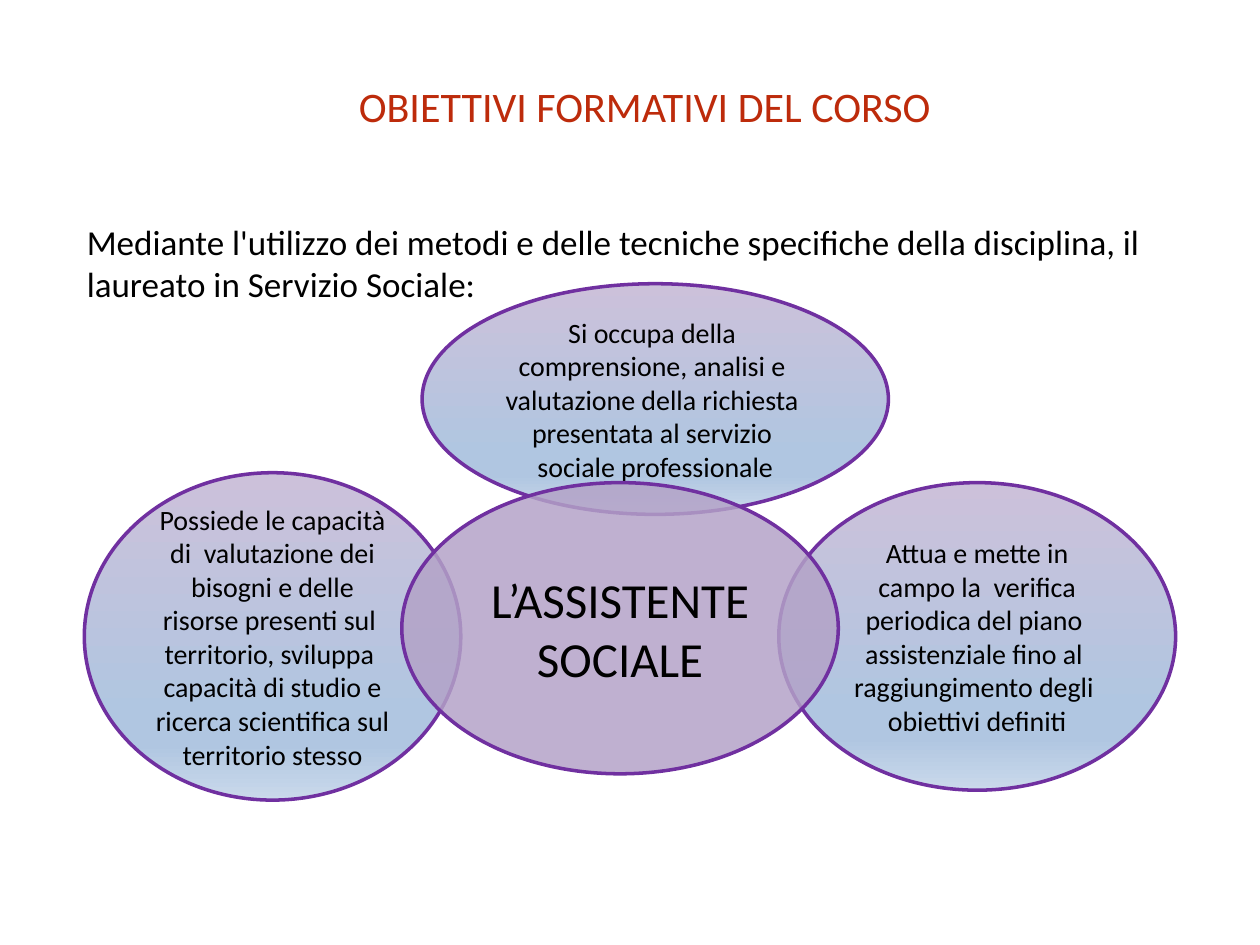
import pptx
import pptx.util
import pptx.dml.color
import pptx.enum.shapes
import pptx.enum.text
import pptx.oxml
import pptx.oxml.ns
from pptx.util import Cm, Pt

RGBColor = pptx.dml.color.RGBColor
ALIGN = pptx.enum.text.PP_ALIGN
ANCHOR = pptx.enum.text.MSO_ANCHOR

RED = RGBColor(0xBD, 0x2B, 0x0B)
BLACK = RGBColor(0, 0, 0)
PURPLE = RGBColor(0x70, 0x30, 0xA0)
LILAC = RGBColor(0xB3, 0xA2, 0xC7)
MIST = RGBColor(0xCC, 0xC1, 0xDA)
SKY = RGBColor(0xB0, 0xC6, 0xE1)
PALE = RGBColor(0xCA, 0xD9, 0xEB)
GRADIENT = [(0, MIST), (74, SKY), (83, SKY), (100, PALE)]

TASKS = [
    ((8.51, 5.72, 9.4, 4.65),
     "Si occupa della  comprensione, analisi e  valutazione della richiesta  "
     "presentata al servizio  sociale professionale"),
    ((1.7, 9.53, 7.59, 6.6),
     "Possiede le capacità di  valutazione dei bisogni e delle risorse presenti sul  "
     "territorio, sviluppa  capacità di studio e ricerca scientifica sul territorio stesso"),
    ((15.7, 9.73, 8, 6.2),
     "Attua e mette in campo la  verifica periodica del piano  assistenziale fino al  "
     "raggiungimento degli  obiettivi definiti"),
]


def set_format(obj, values):
    for name, value in values.items():
        setattr(obj, name, value)


def write_text(tf, lines, size, color=BLACK, **paragraph_format):
    tf.word_wrap = True
    for i, line in enumerate(lines):
        p = tf.paragraphs[0] if i == 0 else tf.add_paragraph()
        set_format(p, paragraph_format)
        r = p.add_run()
        r.text = line
        set_format(r.font, {"name": "Calibri", "size": Pt(size)})
        r.font.color.rgb = color


def add_text(slide, box, text, size, **text_format):
    tb = slide.shapes.add_textbox(*map(Cm, box))
    write_text(tb.text_frame, [text], size, **text_format)


def add_ellipse(slide, box, lines, size):
    sp = slide.shapes.add_shape(pptx.enum.shapes.MSO_SHAPE.OVAL, *map(Cm, box))
    sp.shadow.inherit = False
    sp.line.color.rgb = PURPLE
    sp.line.width = Pt(2)
    sp.text_frame.vertical_anchor = ANCHOR.MIDDLE
    write_text(sp.text_frame, lines, size, alignment=ALIGN.CENTER)
    return sp


def fill_gradient(sp, stops):
    sp.fill.gradient()
    sp.fill.gradient_angle = 270
    qn = pptx.oxml.ns.qn
    gs_list = sp._element.spPr.find(".//" + qn("a:gsLst"))
    for gs in list(gs_list):
        gs_list.remove(gs)
    for position, color in stops:
        gs_list.append(pptx.oxml.parse_xml(
            f'<a:gs {pptx.oxml.ns.nsdecls("a")} pos="{position * 1000}">'
            f'<a:srgbClr val="{color}"/></a:gs>'))


def fill_translucent(sp, color, opacity):
    sp.fill.solid()
    sp.fill.fore_color.rgb = color
    qn = pptx.oxml.ns.qn
    clr = sp._element.spPr.find(qn("a:solidFill")).find(qn("a:srgbClr"))
    clr.append(pptx.oxml.parse_xml(
        f'<a:alpha {pptx.oxml.ns.nsdecls("a")} val="{opacity * 1000}"/>'))


def main():
    prs = pptx.Presentation()
    set_format(prs, {"slide_width": Cm(25.4), "slide_height": Cm(19.05)})
    slide = prs.slides.add_slide(prs.slide_layouts[6])

    add_text(slide, (1.5, 1.73, 23, 1.8), "OBIETTIVI FORMATIVI DEL CORSO", 24,
             color=RED, alignment=ALIGN.CENTER, line_spacing=Pt(22))
    add_text(slide, (1.5, 4.32, 23, 12),
             "Mediante l'utilizzo dei metodi e delle tecniche specifiche della "
             "disciplina, il laureato in Servizio Sociale:", 20)

    for box, text in TASKS:
        fill_gradient(add_ellipse(slide, box, [text], 16), GRADIENT)
    center = add_ellipse(slide, (8.1, 9.73, 8.8, 5.87), ["L’ASSISTENTE", "SOCIALE"], 28)
    fill_translucent(center, LILAC, 84)

    prs.save("out.pptx")


if __name__ == "__main__":
    main()
